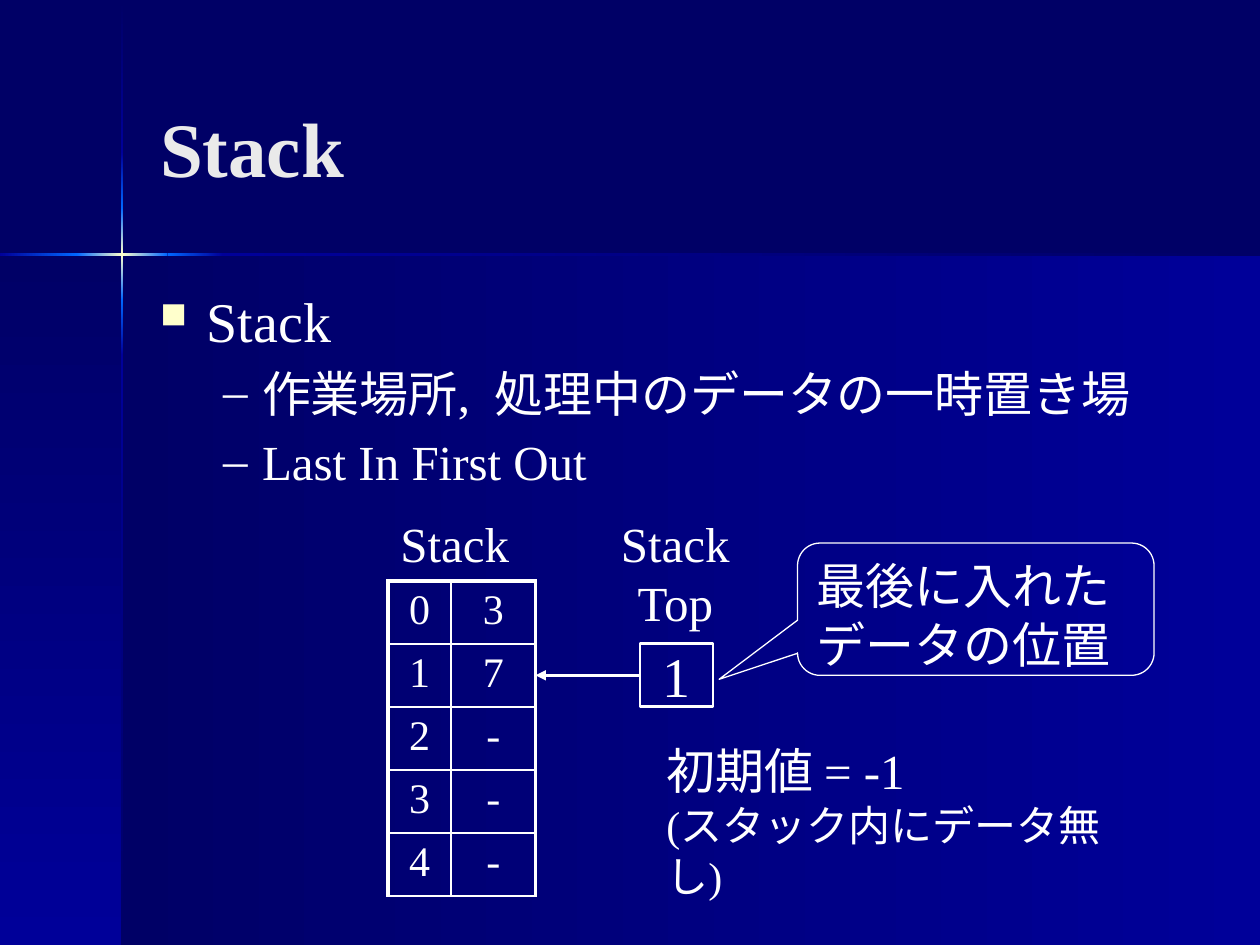
"""Build a slide that explains a stack and its top pointer."""
import itertools

import lxml.etree
import pptx
import pptx.dml.color
import pptx.enum.lang
import pptx.enum.shapes
import pptx.enum.text
import pptx.oxml.ns
import pptx.util

Inches = pptx.util.Inches
Pt = pptx.util.Pt
RGBColor = pptx.dml.color.RGBColor
qn = pptx.oxml.ns.qn
ALIGN = pptx.enum.text.PP_ALIGN
ANCHOR = pptx.enum.text.MSO_ANCHOR
SHAPE = pptx.enum.shapes.MSO_SHAPE

FONT = "Times New Roman"
WHITE = RGBColor(0xFF, 0xFF, 0xFF)
TITLE_GRAY = RGBColor(0xEA, 0xEA, 0xEA)
CREAM = RGBColor(0xFF, 0xFF, 0xCC)
NAVY = RGBColor(0x00, 0x00, 0x66)
BLUE = RGBColor(0x00, 0x00, 0x99)
BRIGHT = RGBColor(0x00, 0x66, 0xFF)

AXIS_X, AXIS_Y, BEAM = 0.97, 2.02, 0.02
VERTICAL_BEAM = [(0, NAVY), (1.21, BLUE), (1.65, BRIGHT), (AXIS_Y, CREAM),
                 (2.38, BRIGHT), (2.82, BLUE), (7.5, NAVY)]
HORIZONTAL_BEAM = [(0, BLUE), (0.61, BRIGHT), (AXIS_X, CREAM),
                   (1.33, BRIGHT), (1.77, BLUE), (10, NAVY)]
STACK_VALUES = ["3", "7", "-", "-", "-"]


def add_text(paragraph, text, size, color=WHITE, bold=False):
    run = paragraph.add_run()
    run.text = text
    run.font.name = FONT
    run.font.size = Pt(size)
    run.font.bold = bold
    run.font.color.rgb = color
    run.font.language_id = pptx.enum.lang.MSO_LANGUAGE_ID.JAPANESE


def fill_frame(frame, lines, align=ALIGN.LEFT, wrap=True):
    frame.word_wrap = wrap
    for index, (text, size) in enumerate(lines):
        paragraph = frame.add_paragraph() if index else frame.paragraphs[0]
        paragraph.alignment = align
        add_text(paragraph, text, size)


def place(shape, left, top, width, height):
    shape.left, shape.top = Inches(left), Inches(top)
    shape.width, shape.height = Inches(width), Inches(height)


def add_gradient(slide, box, start, end, downward):
    shape = slide.shapes.add_shape(SHAPE.RECTANGLE, *map(Inches, box))
    shape.shadow.inherit = False
    shape.line.fill.background()
    shape.fill.gradient()
    shape.fill.gradient_angle = 270 if downward else 0
    for stop, color in zip(shape.fill.gradient_stops, (start, end)):
        stop.color.rgb = color


def add_backdrop(slide):
    slide.background.fill.solid()
    slide.background.fill.fore_color.rgb = NAVY
    height = 7.5 - AXIS_Y
    add_gradient(slide, (AXIS_X, AXIS_Y, 10 - AXIS_X, height), NAVY, BLUE, False)
    add_gradient(slide, (0, AXIS_Y, AXIS_X, height), NAVY, BLUE, True)
    for (start, first), (end, last) in itertools.pairwise(VERTICAL_BEAM):
        box = (AXIS_X - BEAM / 2, start, BEAM, end - start)
        add_gradient(slide, box, first, last, True)
    for (start, first), (end, last) in itertools.pairwise(HORIZONTAL_BEAM):
        box = (start, AXIS_Y - BEAM / 2, end - start, BEAM)
        add_gradient(slide, box, first, last, False)


def set_bullet(paragraph, character, color, margin, indent, font, percent):
    properties = paragraph._p.get_or_add_pPr()
    properties.set("marL", str(Inches(margin)))
    properties.set("indent", str(Inches(indent)))
    bullet_color = lxml.etree.SubElement(properties, qn("a:buClr"))
    lxml.etree.SubElement(bullet_color, qn("a:srgbClr"), val=str(color))
    lxml.etree.SubElement(properties, qn("a:buSzPct"), val=str(percent * 1000))
    lxml.etree.SubElement(properties, qn("a:buFont"), typeface=font)
    lxml.etree.SubElement(properties, qn("a:buChar"), char=character)


def add_title(slide, text):
    title = slide.shapes.title
    slide.shapes.element.append(title.element)
    place(title, 1.17, 0.38, 7.75, 1.2)
    title.text_frame.auto_size = pptx.enum.text.MSO_AUTO_SIZE.NONE
    title.text_frame.vertical_anchor = ANCHOR.BOTTOM
    paragraph = title.text_frame.paragraphs[0]
    paragraph.alignment = ALIGN.LEFT
    add_text(paragraph, text, 44, TITLE_GRAY, True)


def add_outline(slide, heading, points):
    body = slide.placeholders[1]
    slide.shapes.element.append(body.element)
    place(body, 1.17, 2.22, 8.2, 1.92)
    frame = body.text_frame
    frame.auto_size = pptx.enum.text.MSO_AUTO_SIZE.NONE
    fill_frame(frame, [(heading, 32)] + [(point, 28) for point in points])
    first, *others = frame.paragraphs
    first.space_before = Pt(0)
    set_bullet(first, "n", CREAM, 0.37, -0.37, "Wingdings", 65)
    for paragraph in others:
        paragraph.level = 1
        paragraph.space_before = Pt(5.6)
        set_bullet(paragraph, "–", WHITE, 0.81, -0.31, FONT, 100)


def set_borders(cell, widths):
    properties = cell._tc.get_or_add_tcPr()
    for index, (side, width) in enumerate(widths.items()):
        line = lxml.etree.Element(qn("a:ln" + side), w=str(Pt(width)))
        fill = lxml.etree.SubElement(line, qn("a:solidFill"))
        lxml.etree.SubElement(fill, qn("a:srgbClr"), val=str(WHITE))
        properties.insert(index, line)


def add_stack_table(slide, values):
    box = map(Inches, (3.08, 4.61, 1.17, 0.5 * len(values)))
    table = slide.shapes.add_table(len(values), 2, *box).table
    table.first_row = table.horz_banding = False
    table.columns[0].width, table.columns[1].width = Inches(0.5), Inches(0.67)
    for row, value in enumerate(values):
        for column, text in enumerate((str(row), value)):
            cell = table.cell(row, column)
            cell.fill.background()
            set_borders(cell, {"L": 1 if column else 2.25,
                               "R": 2.25 if column else 1,
                               "T": 1 if row else 2.25, "B": 1})
            paragraph = cell.text_frame.paragraphs[0]
            paragraph.alignment = ALIGN.CENTER
            add_text(paragraph, text, 24)


def add_label(slide, box, lines, align=ALIGN.LEFT, wrap=False):
    label = slide.shapes.add_textbox(*map(Inches, box))
    fill_frame(label.text_frame, lines, align, wrap)


def add_outlined(slide, kind, box, line_width, lines, align, anchor):
    shape = slide.shapes.add_shape(kind, *map(Inches, box))
    shape.shadow.inherit = False
    shape.fill.background()
    shape.line.color.rgb = WHITE
    shape.line.width = Pt(line_width)
    shape.text_frame.vertical_anchor = anchor
    fill_frame(shape.text_frame, lines, align)
    return shape


def add_arrow(slide, start_x, end_x, y):
    arrow = slide.shapes.add_connector(
        pptx.enum.shapes.MSO_CONNECTOR.STRAIGHT,
        Inches(start_x), Inches(y), Inches(end_x), Inches(y))
    arrow.line.color.rgb = WHITE
    arrow.line.width = Pt(1.5)
    properties = arrow.element.spPr
    lxml.etree.SubElement(properties.find(qn("a:ln")), qn("a:tailEnd"), type="triangle")
    lxml.etree.SubElement(properties, qn("a:effectLst"))


def main():
    presentation = pptx.Presentation()
    presentation.slide_width, presentation.slide_height = Inches(10), Inches(7.5)
    slide = presentation.slides.add_slide(presentation.slide_layouts[1])
    add_backdrop(slide)
    add_title(slide, "Stack")
    add_outline(slide, "Stack", ["作業場所,  処理中のデータの一時置き場", "Last In First Out"])
    add_stack_table(slide, STACK_VALUES)
    add_label(slide, (3.08, 4.03, 1.06, 0.57), [("Stack", 28)])
    add_label(slide, (4.83, 4.03, 1.06, 1.03), [("Stack", 28), ("Top", 28)], ALIGN.CENTER)
    add_outlined(slide, SHAPE.RECTANGLE, (5.08, 5.11, 0.58, 0.5), 1.5,
                 [("1", 32)], ALIGN.CENTER, ANCHOR.MIDDLE)
    add_arrow(slide, 5.08, 4.25, 5.36)
    add_label(slide, (5.19, 5.83, 3.66, 0.98),
              [("初期値 = -1", 28), ("(スタック内にデータ無し)", 24)], wrap=True)
    callout = add_outlined(slide, SHAPE.ROUNDED_RECTANGULAR_CALLOUT,
                           (6.33, 4.31, 2.83, 1.05), 0.75,
                           [("最後に入れたデータの位置", 28)], ALIGN.LEFT, ANCHOR.TOP)
    for index, value in enumerate((-0.72, 0.53, 0.17)):
        callout.adjustments[index] = value
    presentation.save("out.pptx")


if __name__ == "__main__":
    main()
